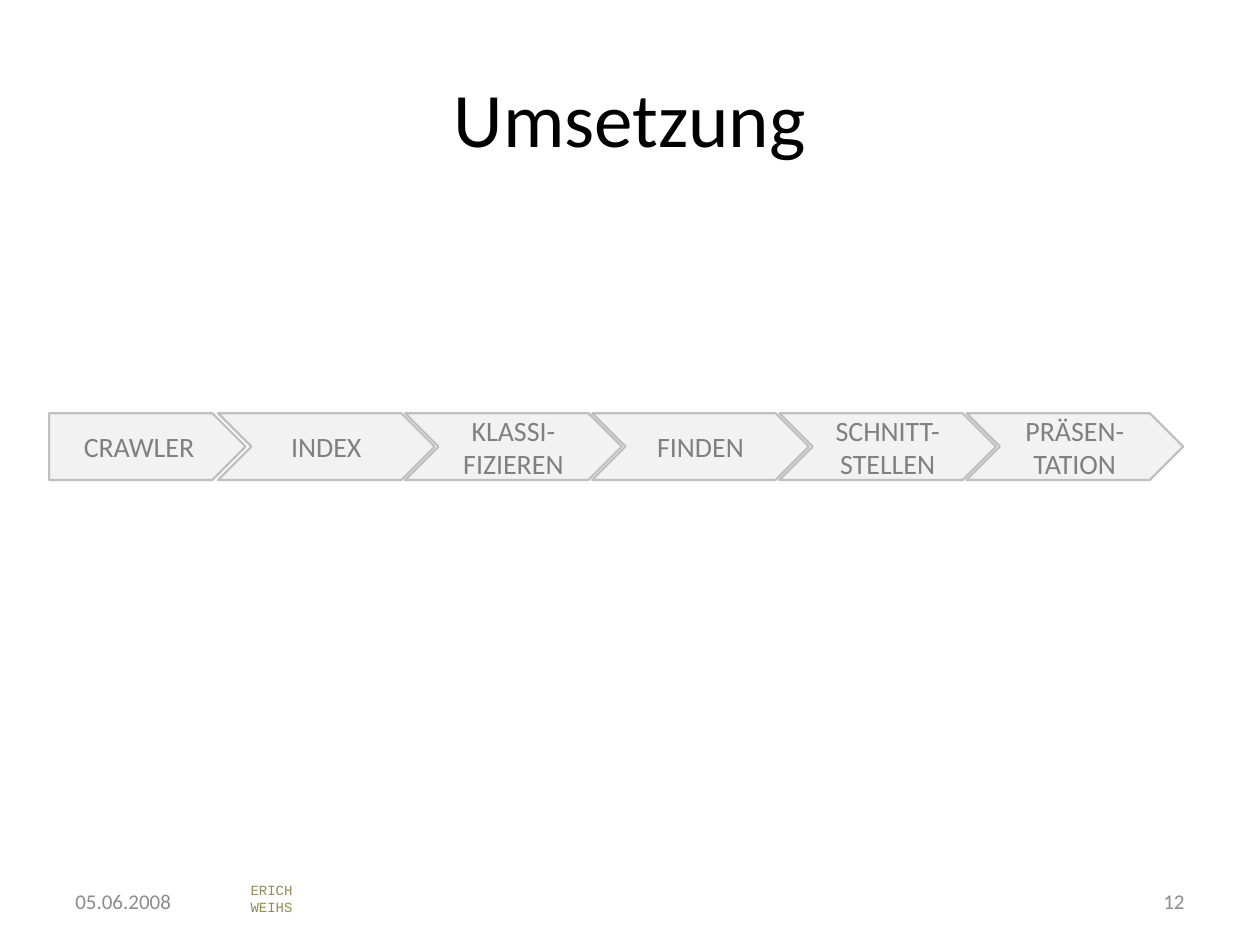
from dataclasses import dataclass

from lxml.etree import SubElement
from pptx import Presentation
from pptx.dml.color import RGBColor
from pptx.enum.shapes import MSO_SHAPE
from pptx.enum.text import MSO_ANCHOR, MSO_AUTO_SIZE, PP_ALIGN
from pptx.oxml.ns import qn
from pptx.util import Inches, Pt

# Content
TITLE = "Umsetzung"
STEPS = ["CRAWLER", "INDEX", "KLASSI-FIZIEREN", "FINDEN", "SCHNITT-STELLEN", "PRÄSEN-TATION"]
DATE = "05.06.2008"
AUTHOR = ["ERICH", "WEIHS"]
PAGE_NUMBER = "12"


@dataclass(frozen=True)
class Theme:
    font: str = "Calibri"
    author_font: str = "Courier New"
    title: str = "000000"
    footer: str = "8C8C8C"
    author: str = "948A54"
    step_text: str = "808080"
    step_outline: str = "A6A6A6"
    step_fill: str = "F2F2F2"
    step_line: str = "BFBFBF"
    title_size: int = 44
    step_size: int = 16
    footer_size: int = 12
    author_size: int = 8


THEME = Theme()

# Geometry of the process chain, in inches
STEP_TOP, STEP_HEIGHT = 3.28, 0.53
START_LEFT, START_WIDTH = 0.39, 1.56
CHEVRON_LEFT, CHEVRON_WIDTH, CHEVRON_PITCH = 1.73, 1.72, 1.485


def outline_text(span, color, width):
    properties = span.font._element
    line = SubElement(properties, qn("a:ln"), w=str(Pt(width)))
    fill = SubElement(line, qn("a:solidFill"))
    SubElement(fill, qn("a:srgbClr"), val=color)


def write(shape, lines, *, size, color, font=THEME.font, align=PP_ALIGN.LEFT,
          anchor=MSO_ANCHOR.MIDDLE, wrap=True, outline=None):
    frame = shape.text_frame
    frame.word_wrap = wrap
    frame.vertical_anchor = anchor
    for index, line in enumerate(lines):
        para = frame.add_paragraph() if index else frame.paragraphs[0]
        para.alignment = align
        span = para.add_run()
        span.text = line
        if outline:
            outline_text(span, outline, 0.75)
        span.font.name = font
        span.font.size = Pt(size)
        span.font.color.rgb = RGBColor.from_string(color)


def add_box(page, *place):
    return page.shapes.add_textbox(*map(Inches, place))


def add_step(page, index, label):
    if index == 0:
        kind, left, width = MSO_SHAPE.PENTAGON, START_LEFT, START_WIDTH
    else:
        kind, width = MSO_SHAPE.CHEVRON, CHEVRON_WIDTH
        left = CHEVRON_LEFT + (index - 1) * CHEVRON_PITCH
    step = page.shapes.add_shape(kind, *map(Inches, (left, STEP_TOP, width, STEP_HEIGHT)))
    step.shadow.inherit = False
    step.fill.solid()
    step.fill.fore_color.rgb = RGBColor.from_string(THEME.step_fill)
    step.line.color.rgb = RGBColor.from_string(THEME.step_line)
    step.line.width = Pt(1.25)
    write(step, [label], size=THEME.step_size, color=THEME.step_text,
          align=PP_ALIGN.CENTER, outline=THEME.step_outline)


def main():
    deck = Presentation()
    deck.slide_width, deck.slide_height = Inches(10), Inches(7.5)
    page = deck.slides.add_slide(deck.slide_layouts[6])

    # Footer: date and author
    write(add_box(page, 0.5, 6.95, 2.33, 0.4), [DATE],
          size=THEME.footer_size, color=THEME.footer)
    author_box = add_box(page, 1.89, 6.95, 0.54, 0.37)
    write(author_box, AUTHOR, size=THEME.author_size, color=THEME.author,
          font=THEME.author_font, anchor=MSO_ANCHOR.TOP, wrap=False)
    author_box.text_frame.auto_size = MSO_AUTO_SIZE.SHAPE_TO_FIT_TEXT

    # Title
    write(add_box(page, 0.5, 0.3, 9, 1.25), [TITLE],
          size=THEME.title_size, color=THEME.title, align=PP_ALIGN.CENTER)

    # Footer: page number
    write(add_box(page, 7.17, 6.95, 2.33, 0.4), [PAGE_NUMBER],
          size=THEME.footer_size, color=THEME.footer, align=PP_ALIGN.RIGHT)

    # Process chain
    for index, label in enumerate(STEPS):
        add_step(page, index, label)

    deck.save("out.pptx")


if __name__ == "__main__":
    main()
